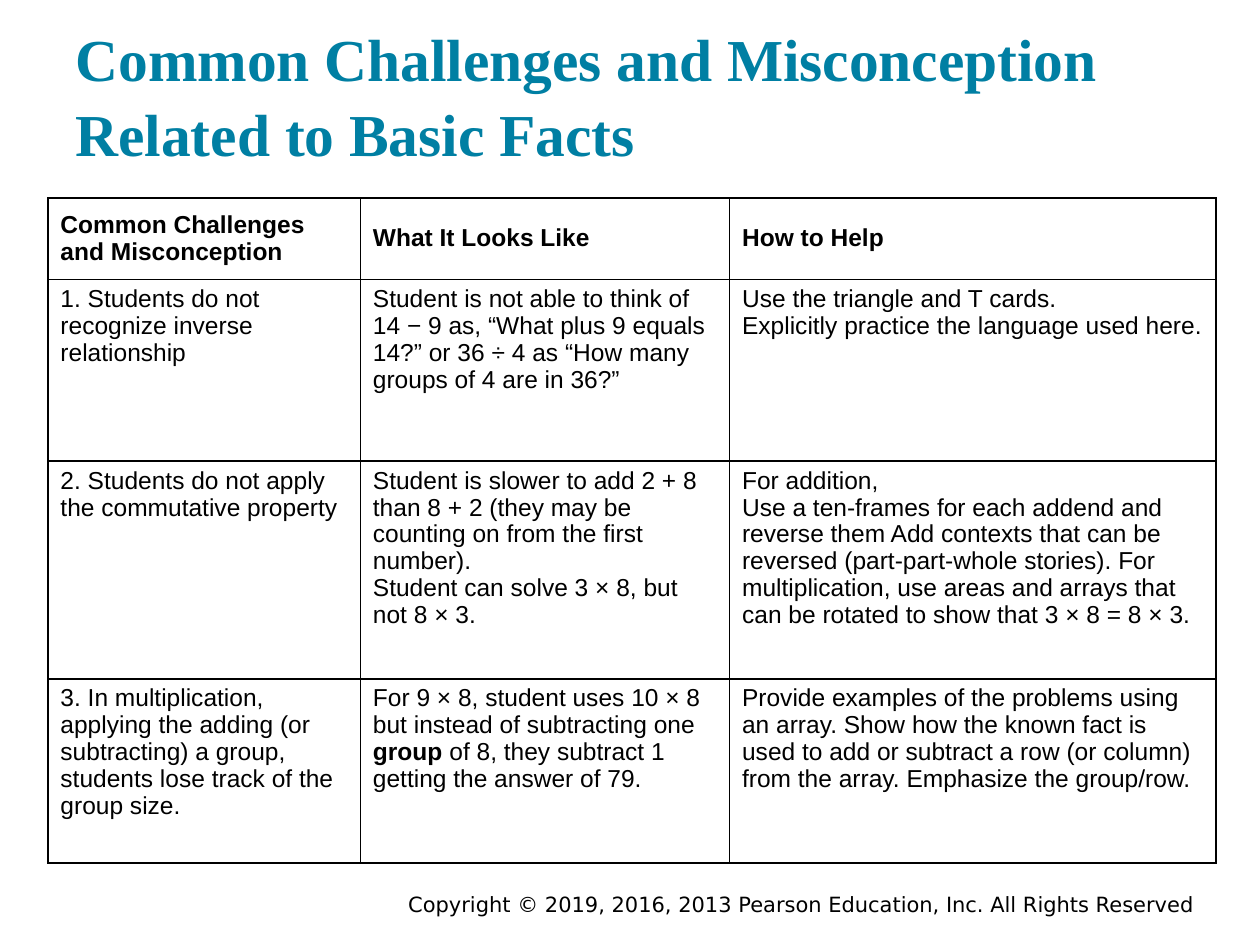
import pptx
import pptx.util
import pptx.dml.color
import pptx.enum.text
import pptx.oxml
import pptx.oxml.ns
from dataclasses import dataclass

Inches, Pt = pptx.util.Inches, pptx.util.Pt
Anchor = pptx.enum.text.MSO_ANCHOR
Align = pptx.enum.text.PP_ALIGN


@dataclass(frozen=True)
class Theme:
    teal: str = "007FA3"
    black: str = "000000"
    head: tuple = ("Times New Roman", 34)
    body: tuple = ("Arial", 14)
    foot: tuple = ("DejaVu Sans", 12)


THEME = Theme()
COLS = (2.48, 2.93, 3.86)
ROWS = (0.65, 1.44, 1.73, 1.46)
BOLD = "*"  # marks the start and end of bold words
CELLS = (
    ("*Common Challenges and Misconception*", "*What It Looks Like*", "*How to Help*"),
    ("1. Students do not recognize inverse relationship",
     "Student is not able to think of 14 − 9 as, “What plus 9 equals 14?” "
     "or 36 ÷ 4 as “How many groups of 4 are in 36?”",
     "Use the triangle and T cards.\nExplicitly practice the language used here."),
    ("2. Students do not apply the commutative property",
     "Student is slower to add 2 + 8 than 8 + 2 (they may be counting on "
     "from the first number).\nStudent can solve 3 × 8, but not 8 × 3.",
     "For addition,\nUse a ten-frames for each addend and reverse them "
     "Add contexts that can be reversed (part-part-whole stories). "
     "For multiplication, use areas and arrays that can be rotated to show "
     "that 3 × 8 = 8 × 3."),
    ("3. In multiplication, applying the adding (or subtracting) a group, "
     "students lose track of the group size.",
     "For 9 × 8, student uses 10 × 8 but instead of subtracting one "
     "*group *of 8, they subtract 1 getting the answer of 79.",
     "Provide examples of the problems using an array. Show how the known "
     "fact is used to add or subtract a row (or column) from the array. "
     "Emphasize the group/row."),
)


def style(font, face, color, bold=False):
    font.name, font.size = face[0], Pt(face[1])
    font.color.rgb = pptx.dml.color.RGBColor.from_string(color)
    font.bold = bold


def place(shape, *box):
    shape.left, shape.top, shape.width, shape.height = map(Inches, box)


def add_title(slide, text):
    title = slide.shapes.title
    place(title, 0.5, 0.24, 9, 1.2)
    frame = title.text_frame
    frame.text = text
    frame.auto_size = pptx.enum.text.MSO_AUTO_SIZE.NONE
    frame.vertical_anchor = Anchor.BOTTOM
    frame.margin_left = frame.margin_right = Inches(0.1)
    frame.margin_top = frame.margin_bottom = Inches(0.1)
    para = frame.paragraphs[0]
    para.alignment, para.line_spacing = Align.LEFT, 1.05
    style(para.runs[0].font, THEME.head, THEME.teal, True)


def add_foot(slide, text):
    box = slide.shapes.add_textbox(*map(Inches, (2.92, 7.05, 6.66, 0.25)))
    frame = box.text_frame
    frame.word_wrap = True
    frame.vertical_anchor = Anchor.MIDDLE
    frame.text = text
    para = frame.paragraphs[0]
    para.alignment = Align.RIGHT
    style(para.runs[0].font, THEME.foot, THEME.black)


def rule(cell):
    """Draw a thin line on all four sides of the cell."""
    props = cell._tc.get_or_add_tcPr()
    for spot, side in enumerate(("lnL", "lnR", "lnT", "lnB")):
        line = pptx.oxml.parse_xml(
            f'<a:{side} {pptx.oxml.ns.nsdecls("a")} w="12700"><a:solidFill>'
            f'<a:srgbClr val="{THEME.black}"/></a:solidFill></a:{side}>')
        props.insert(spot, line)


def fill_cell(cell, text):
    cell.fill.background()
    rule(cell)
    frame = cell.text_frame
    for num, line in enumerate(text.split("\n")):
        para = frame.add_paragraph() if num else frame.paragraphs[0]
        para.line_spacing = 0.98
        for part, words in enumerate(line.split(BOLD)):
            if words:
                run = para.add_run()
                run.text = words
                style(run.font, THEME.body, THEME.black, part % 2 == 1)


def add_grid(slide):
    frame = slide.shapes.add_table(
        len(ROWS), len(COLS),
        *map(Inches, (0.38, 1.57, sum(COLS), sum(ROWS))))
    table = frame.table
    table.horz_banding = table.first_row = False
    for col, width in zip(table.columns, COLS):
        col.width = Inches(width)
    for num, (row, height) in enumerate(zip(table.rows, ROWS)):
        row.height = Inches(height)
        for cell, text in zip(row.cells, CELLS[num]):
            fill_cell(cell, text)
            cell.vertical_anchor = Anchor.TOP if num else Anchor.MIDDLE


def main():
    deck = pptx.Presentation()
    deck.slide_width, deck.slide_height = Inches(10), Inches(7.5)
    slide = deck.slides.add_slide(deck.slide_layouts.get_by_name("Title Only"))
    add_foot(slide, "Copyright © 2019, 2016, 2013 Pearson Education, Inc. "
                    "All Rights Reserved")
    add_title(slide, "Common Challenges and Misconception Related to Basic Facts")
    add_grid(slide)
    deck.save("out.pptx")


if __name__ == "__main__":
    main()
